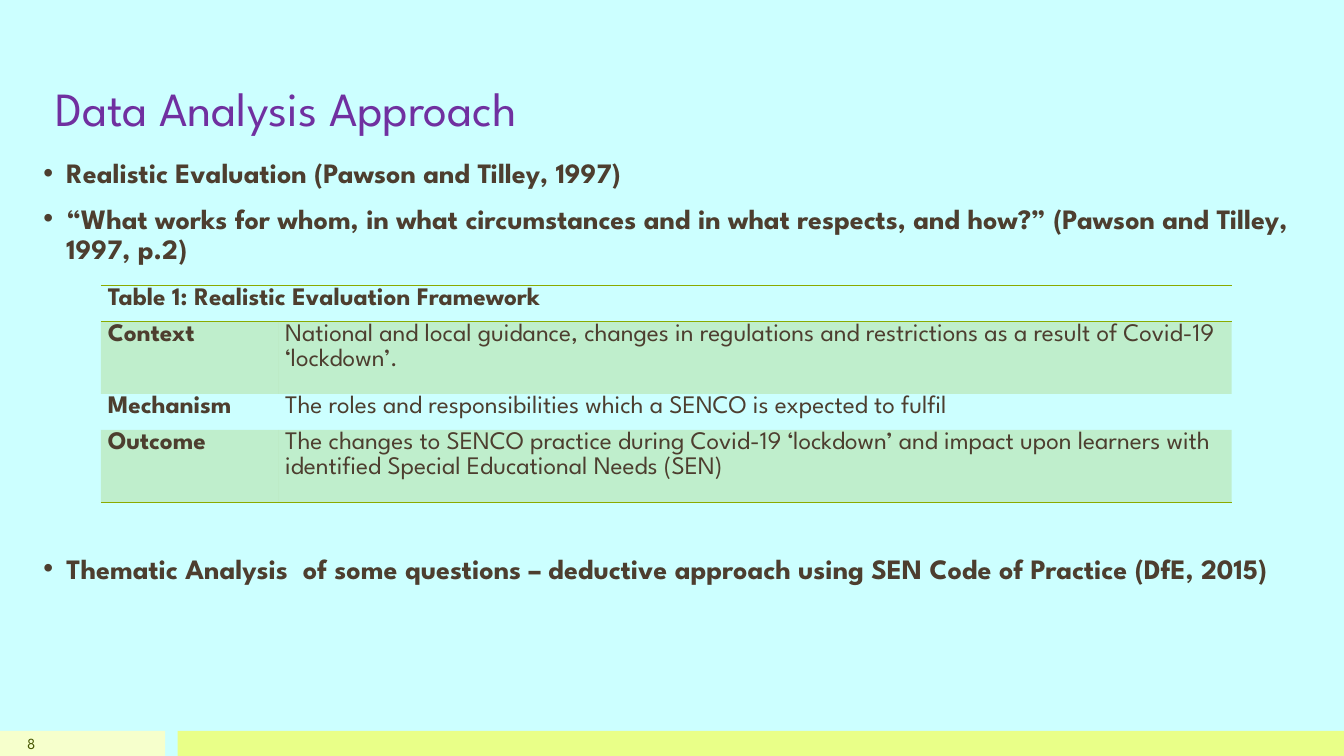
from lxml import etree
from pptx import Presentation
from pptx import util as u
from pptx.dml.color import RGBColor
from pptx.enum import shapes, text
from pptx.oxml import ns

FONT = "League Spartan"
BROWN, OLIVE = "4D3E2F", "8BAA00"
NO_STYLE = "{2D5ABB26-0587-4C30-8999-92F81FD0307C}"


def colour(value):
    return RGBColor.from_string(value)


def add_xml(parent, tag, **attributes):
    return etree.SubElement(parent, ns.qn(tag), attributes)


def write(para, words, size=20, color=BROWN, bold=False, align=None,
          leading=None, before=0, bullet=None, indent=16.5):
    """Put one formatted run into a paragraph."""
    if bullet:
        props = para._p.get_or_add_pPr()
        props.set("marL", str(u.Pt(indent)))
        props.set("indent", str(-u.Pt(indent)))
        add_xml(props, "a:buFont", typeface="Arial")
        add_xml(props, "a:buChar", char=bullet)
    if align is not None:
        para.alignment = align
    if leading:
        para.line_spacing = u.Pt(leading)
    para.space_before = u.Pt(before)
    span = para.add_run()
    span.text = words
    span.font.name, span.font.size, span.font.bold = FONT, u.Pt(size), bold
    span.font.color.rgb = colour(color)


class SlideBuilder:
    def __init__(self, deck, background):
        self.page = deck.slides.add_slide(deck.slide_layouts[6])
        self.page.background.fill.solid()
        self.page.background.fill.fore_color.rgb = colour(background)

    def bar(self, left, top, width, height, fill):
        box = self.page.shapes.add_shape(
            shapes.MSO_SHAPE.RECTANGLE, *map(u.Pt, (left, top, width, height)))
        box.shadow.inherit = False
        box.fill.solid()
        box.fill.fore_color.rgb = colour(fill)
        box.line.fill.background()

    def text_box(self, left, top, width, height, anchor=text.MSO_ANCHOR.TOP):
        box = self.page.shapes.add_textbox(*map(u.Pt, (left, top, width, height)))
        frame = box.text_frame
        frame.word_wrap = True
        frame.vertical_anchor = anchor
        return frame

    def table(self, left, top, columns, rows):
        frame = self.page.shapes.add_table(
            len(rows), len(columns), u.Pt(left), u.Pt(top),
            u.Pt(sum(columns)), u.Pt(sum(rows)))
        table = frame.table
        table.first_row = table.horz_banding = False
        table._tbl.tblPr[0].text = NO_STYLE
        for column, width in zip(table.columns, columns):
            column.width = u.Pt(width)
        for row, height in zip(table.rows, rows):
            row.height = u.Pt(height)
        return table

    def cell(self, cell, words, bold=False, shaded=False, edges=()):
        cell.margin_left = cell.margin_right = u.Pt(5)
        cell.margin_top = cell.margin_bottom = 0
        props = cell._tc.get_or_add_tcPr()
        # Borders come before the fill
        for edge in edges:
            line = add_xml(props, "a:ln" + edge, w=str(u.Pt(1)))
            add_xml(add_xml(line, "a:solidFill"), "a:srgbClr", val=OLIVE)
        if shaded:
            tint = add_xml(add_xml(props, "a:solidFill"), "a:srgbClr", val=OLIVE)
            add_xml(tint, "a:alpha", val="20000")
        else:
            add_xml(props, "a:noFill")
        if words:
            write(cell.text_frame.paragraphs[0], words, size=18, bold=bold,
                  leading=17.9)


def main():
    deck = Presentation()
    deck.slide_width, deck.slide_height = u.Pt(960), u.Pt(540)
    slide = SlideBuilder(deck, "CCFFFF")

    # Footer bars and slide number
    slide.bar(0, 522, 118, 18, "F6FFCC")
    slide.bar(127, 522, 833, 18, "E9FF88")
    number = slide.text_box(0, 522, 32.4, 18, text.MSO_ANCHOR.MIDDLE)
    write(number.paragraphs[0], "8", size=11, color="455500",
          align=text.PP_ALIGN.RIGHT)

    # Title
    title = slide.text_box(32.4, 52, 857.5, 49, text.MSO_ANCHOR.BOTTOM)
    write(title.paragraphs[0], "Data Analysis Approach", size=34, color="7030A0")

    # Bullets; the last one stands below the table
    body = slide.text_box(23.8, 110, 912, 364)
    bullets = [
        ("Realistic Evaluation (Pawson and Tilley, 1997)", 0),
        ("“What works for whom, in what circumstances and in what respects, "
         "and how?” (Pawson and Tilley, 1997, p.2)", 11),
        ("Thematic Analysis  of some questions – deductive approach using "
         "SEN Code of Practice (DfE, 2015)", 207),
    ]
    for index, (words, before) in enumerate(bullets):
        para = body.add_paragraph() if index else body.paragraphs[0]
        write(para, words, bold=True, leading=21.6, before=before, bullet="•")

    # Framework table
    framework = [
        ("Context", "National and local guidance, changes in regulations and "
         "restrictions as a result of Covid-19 ‘lockdown’."),
        ("Mechanism", "The roles and responsibilities which a SENCO is "
         "expected to fulfil"),
        ("Outcome", "The changes to SENCO practice during Covid-19 ‘lockdown’ "
         "and impact upon learners with identified Special Educational Needs "
         "(SEN)"),
    ]
    table = slide.table(72, 204, [126.7, 681.1], [25.7, 51.7, 25.7, 51.7])
    table.cell(0, 0).merge(table.cell(0, 1))
    heading = ("Table 1: Realistic Evaluation Framework", "")
    for column, words in enumerate(heading):
        slide.cell(table.cell(0, column), words, bold=True, edges="TB")
    for row, entry in enumerate(framework, 1):
        for column, words in enumerate(entry):
            slide.cell(table.cell(row, column), words, bold=column == 0,
                       shaded=row % 2 == 1,
                       edges="B" if row == len(framework) else "")

    deck.save("out.pptx")


if __name__ == "__main__":
    main()
